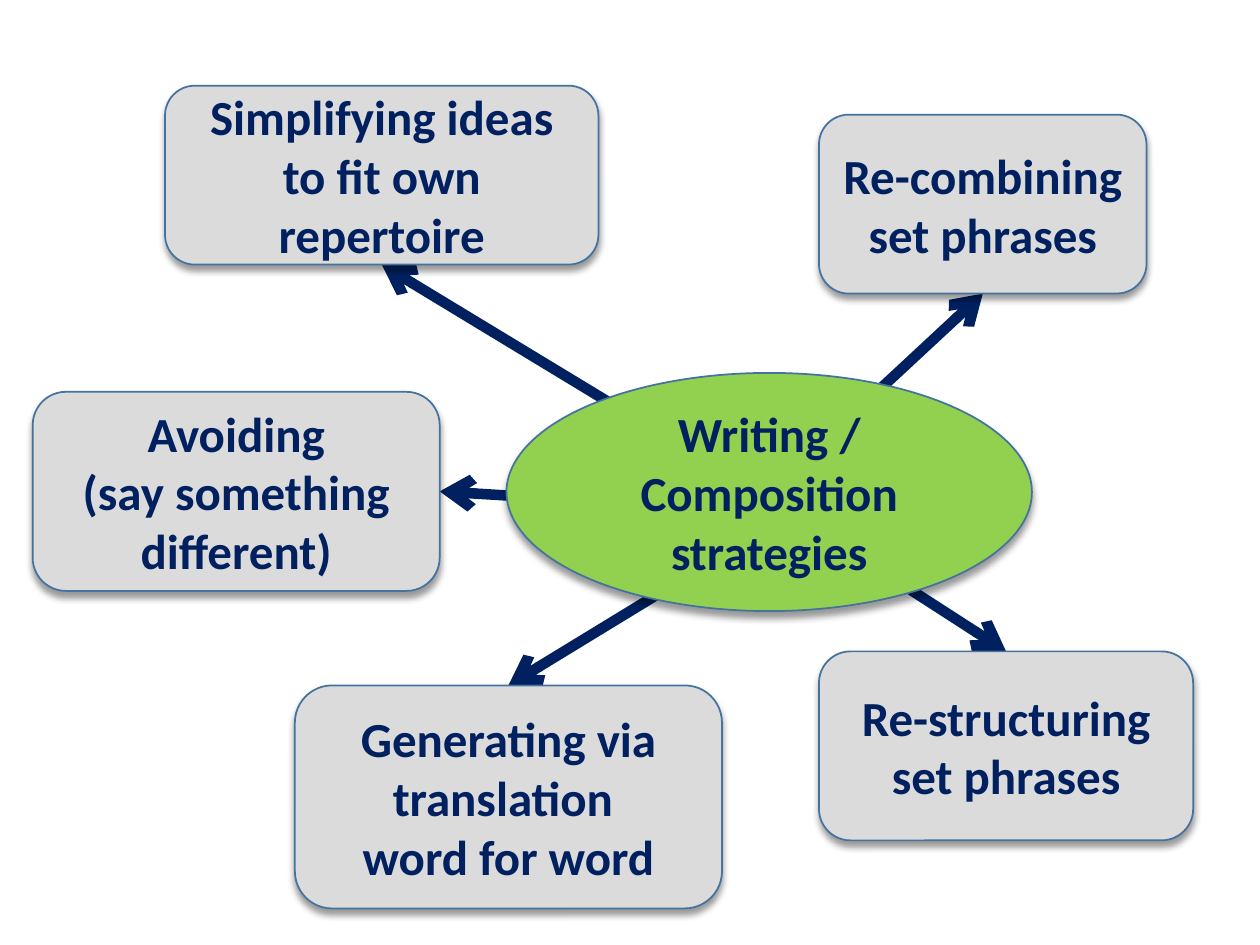
from lxml.etree import SubElement
from pptx import Presentation
from pptx.dml.color import RGBColor
from pptx.enum.shapes import MSO_CONNECTOR as Connector, MSO_SHAPE as Shape
from pptx.enum.text import MSO_ANCHOR as Anchor, PP_ALIGN as Align
from pptx.oxml.ns import qn
from pptx.util import Inches, Pt

NAVY, GREEN, GREY, OUTLINE = "002060", "92D050", "DBDBDB", "43739E"
TOP, BOTTOM, RIGHT = 0, 2, 3
HUB = ("Writing / Composition strategies", (4.02, 2.96, 4.17, 1.89))
HUB_START = (6.28, 4.07)
STRATEGIES = [
    ("Re-combining set phrases", (6.5, 0.91, 2.6, 1.42), BOTTOM, (6.11, 3.9)),
    ("Re-structuring set phrases", (6.5, 5.17, 2.97, 1.5), TOP, HUB_START),
    ("Generating via translation \vword for word", (2.34, 5.44, 3.39, 1.77), TOP, HUB_START),
    ("Avoiding\v(say something different)", (0.26, 3.11, 3.23, 1.58), RIGHT, HUB_START),
    ("Simplifying ideas to fit own repertoire", (1.31, 0.68, 3.44, 1.42), BOTTOM, HUB_START),
]


def paint(color_format, color):
    color_format.rgb = RGBColor.from_string(color)


def add_arrow(slide, start):
    x, y = map(Inches, start)
    arrow = slide.shapes.add_connector(Connector.STRAIGHT, x, y, x, y)
    arrow.line.width = Pt(6)
    paint(arrow.line.color, NAVY)
    SubElement(arrow.line._get_or_add_ln(), qn("a:tailEnd"), type="arrow")
    SubElement(arrow._element.spPr, qn("a:effectLst"))
    return arrow


def add_shadow(bubble):
    effects = SubElement(bubble._element.spPr, qn("a:effectLst"))
    shadow = SubElement(effects, qn("a:outerShdw"), blurRad=str(Pt(4)), dist=str(Pt(3)),
                        dir="5400000", rotWithShape="0")
    black = SubElement(shadow, qn("a:srgbClr"), val="000000")
    SubElement(black, qn("a:alpha"), val="40000")


def add_bubble(slide, kind, label, box, fill):
    bubble = slide.shapes.add_shape(kind, *map(Inches, box))
    bubble.fill.solid()
    paint(bubble.fill.fore_color, fill)
    paint(bubble.line.color, OUTLINE)
    bubble.line.width = Pt(1)
    add_shadow(bubble)
    frame = bubble.text_frame
    frame.word_wrap = True
    frame.vertical_anchor = Anchor.MIDDLE
    frame.text = label
    paragraph = frame.paragraphs[0]
    paragraph.alignment = Align.CENTER
    font = paragraph.font
    font.name, font.size, font.bold = "Calibri", Pt(28), True
    paint(font.color, NAVY)
    return bubble


def main():
    deck = Presentation()
    deck.slide_width, deck.slide_height = Inches(10), Inches(7.5)
    slide = deck.slides.add_slide(deck.slide_layouts[6])
    arrows = [add_arrow(slide, start) for *_, start in STRATEGIES]
    add_bubble(slide, Shape.OVAL, *HUB, GREEN)
    for arrow, (label, box, side, _) in zip(arrows, STRATEGIES):
        bubble = add_bubble(slide, Shape.ROUNDED_RECTANGLE, label, box, GREY)
        arrow.end_connect(bubble, side)
    deck.save("out.pptx")


if __name__ == "__main__":
    main()
